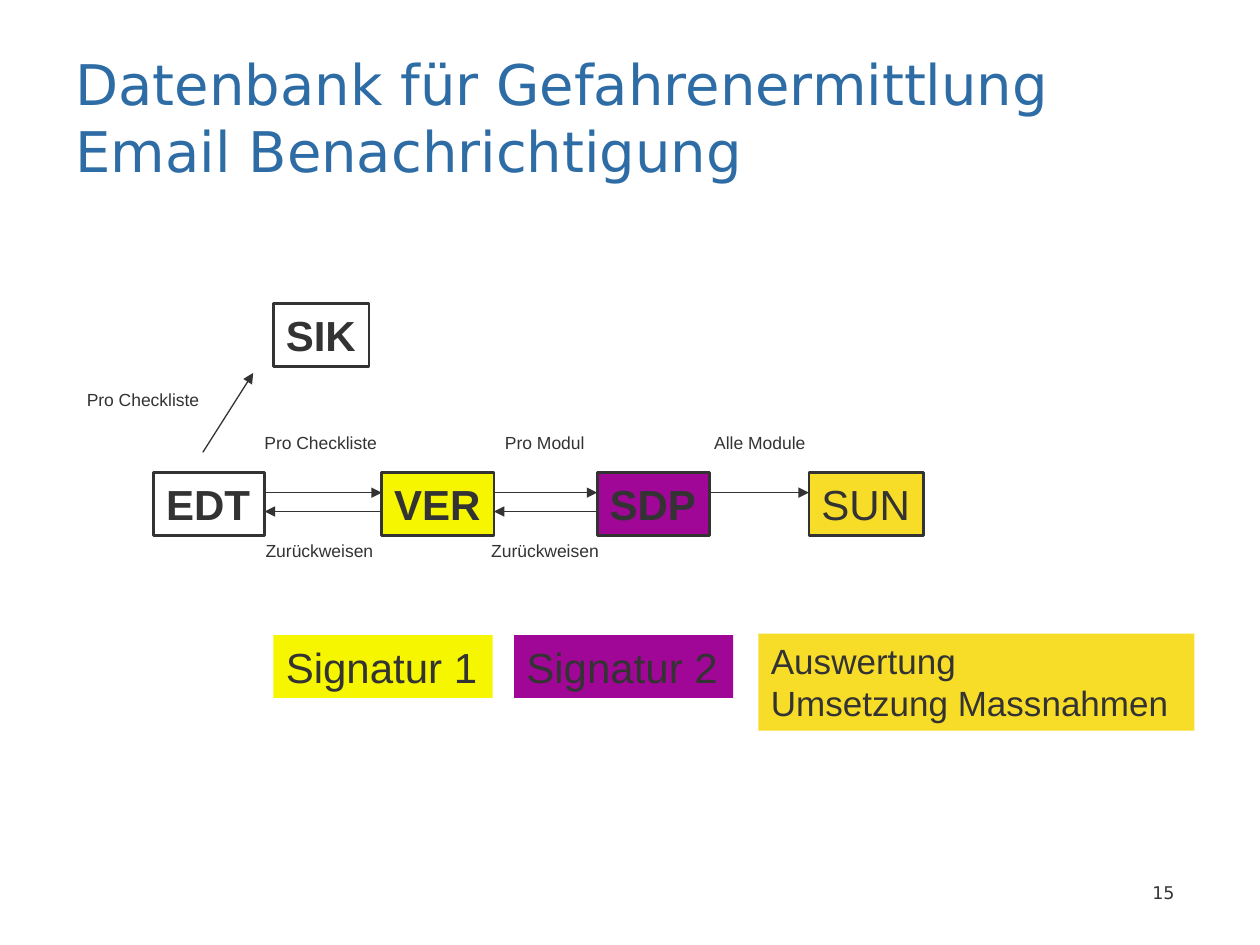
from lxml.etree import SubElement
from pptx import Presentation
from pptx.dml.color import RGBColor
from pptx.enum.shapes import MSO_CONNECTOR, MSO_SHAPE
from pptx.enum.text import MSO_ANCHOR, MSO_AUTO_SIZE, PP_ALIGN
from pptx.oxml.ns import qn
from pptx.util import Inches, Pt

TITLE_BLUE = RGBColor(0x2E, 0x6C, 0xA5)
DARK = RGBColor(0x33, 0x33, 0x33)
YELLOW = RGBColor(0xF6, 0xF6, 0x00)
PURPLE = RGBColor(0xA1, 0x07, 0x96)
GOLD = RGBColor(0xF8, 0xDD, 0x28)

BOX_HEIGHT = 0.5
STATION_TOP = 3.75
FORWARD_Y, BACK_Y = 3.91, 4.06
FORWARD_LABEL_TOP, BACK_LABEL_TOP = 3.38, 4.24

# name, left, width, fill, bold
STATIONS = [
    ("EDT", 1.22, 0.88, None, True),
    ("VER", 3.03, 0.89, YELLOW, True),
    ("SDP", 4.74, 0.89, PURPLE, True),
    ("SUN", 6.42, 0.91, GOLD, False),
]

# text, left, top, width
LABELS = [
    ("Pro Checkliste", 2.0, FORWARD_LABEL_TOP, 1.09),
    ("Pro Modul", 3.91, FORWARD_LABEL_TOP, 0.83),
    ("Alle Module", 5.57, FORWARD_LABEL_TOP, 0.92),
    ("Pro Checkliste", 0.59, 3.04, 1.09),
    ("Zurückweisen", 2.01, BACK_LABEL_TOP, 1.06),
    ("Zurückweisen", 3.8, BACK_LABEL_TOP, 1.06),
]

# text, left, top, width, height, fill, size, wrap
LEGEND = [
    ("Signatur 1", 2.17, 5.04, 1.74, BOX_HEIGHT, YELLOW, 24, False),
    ("Signatur 2", 4.08, 5.04, 1.74, BOX_HEIGHT, PURPLE, 24, False),
    ("Auswertung\nUmsetzung Massnahmen", 6.02, 5.03, 3.46, 0.77, GOLD, 20, True),
]


def write(frame, text, size, color=DARK, font="Arial", bold=False,
          align=PP_ALIGN.LEFT, anchor=MSO_ANCHOR.TOP, wrap=False):
    frame.text = text
    frame.word_wrap = wrap
    frame.auto_size = MSO_AUTO_SIZE.NONE
    frame.vertical_anchor = anchor
    for paragraph in frame.paragraphs:
        paragraph.alignment = align
        for run in paragraph.runs:
            run.font.name = font
            run.font.size = Pt(size)
            run.font.bold = bold
            run.font.color.rgb = color


def add_title(slide, text):
    title = slide.shapes.title
    title.left, title.top = Inches(0.5), Inches(0.3)
    title.width, title.height = Inches(9), Inches(1.25)
    write(title.text_frame, text, 32, TITLE_BLUE, "DejaVu Sans",
          anchor=MSO_ANCHOR.MIDDLE, wrap=True)


def add_box(slide, text, left, top, width, height=BOX_HEIGHT, fill=None,
            size=24, bold=False, outlined=False, wrap=False):
    box = slide.shapes.add_shape(MSO_SHAPE.RECTANGLE, Inches(left), Inches(top),
                                 Inches(width), Inches(height))
    box.shadow.inherit = False
    if fill is None:
        box.fill.background()
    else:
        box.fill.solid()
        box.fill.fore_color.rgb = fill
    if outlined:
        box.line.color.rgb = DARK
        box.line.width = Pt(1.5)
    else:
        box.line.fill.background()
    write(box.text_frame, text, size, bold=bold, wrap=wrap)


def add_text(slide, text, left, top, width, height, **style):
    box = slide.shapes.add_textbox(Inches(left), Inches(top),
                                   Inches(width), Inches(height))
    write(box.text_frame, text, 10, **style)


def add_arrow(slide, x1, y1, x2, y2):
    arrow = slide.shapes.add_connector(MSO_CONNECTOR.STRAIGHT, Inches(x1), Inches(y1),
                                       Inches(x2), Inches(y2))
    arrow.line.color.rgb = DARK
    arrow.line.width = Pt(0.75)
    SubElement(arrow.line._get_or_add_ln(), qn("a:tailEnd"), type="triangle")
    SubElement(arrow._element.spPr, qn("a:effectLst"))


def add_workflow(slide):
    for name, left, width, fill, bold in STATIONS:
        add_box(slide, name, left, STATION_TOP, width, fill=fill, bold=bold, outlined=True)
    add_box(slide, "SIK", 2.17, 2.41, 0.76, bold=True, outlined=True)
    add_arrow(slide, 1.61, 3.59, 2.01, 2.96)

    for source, target in zip(STATIONS, STATIONS[1:]):
        gap_start, gap_end = source[1] + source[2], target[1]
        add_arrow(slide, gap_start, FORWARD_Y, gap_end, FORWARD_Y)
        if target[0] != "SUN":  # the last station sends nothing back
            add_arrow(slide, gap_end, BACK_Y, gap_start, BACK_Y)

    for text, left, top, width in LABELS:
        add_text(slide, text, left, top, width, 0.27)


def add_legend(slide):
    for text, left, top, width, height, fill, size, wrap in LEGEND:
        add_box(slide, text, left, top, width, height, fill, size, wrap=wrap)


def main():
    prs = Presentation()
    prs.slide_width, prs.slide_height = Inches(10), Inches(7.5)
    slide = prs.slides.add_slide(prs.slide_layouts[5])
    add_title(slide, "Datenbank für Gefahrenermittlung\vEmail Benachrichtigung")
    add_workflow(slide)
    add_legend(slide)
    add_text(slide, "15", 7.24, 6.92, 2.18, 0.33, font="DejaVu Sans",
             align=PP_ALIGN.RIGHT, anchor=MSO_ANCHOR.MIDDLE, wrap=True)
    prs.save("out.pptx")


if __name__ == "__main__":
    main()
